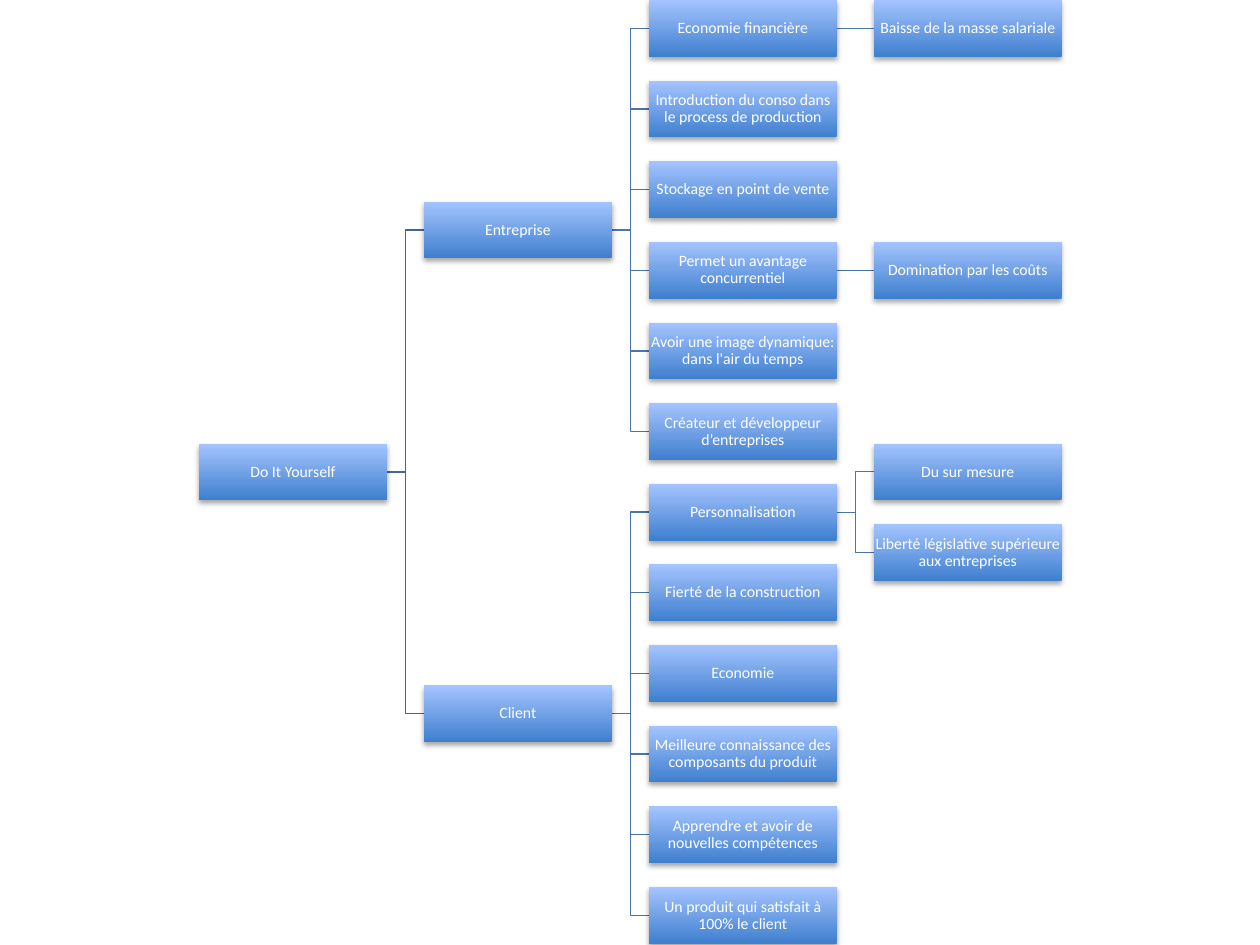
"""Builds a horizontal hierarchy slide about Do It Yourself."""
from lxml import etree
from pptx import Presentation
from pptx.dml.color import RGBColor
from pptx.enum.shapes import MSO_CONNECTOR, MSO_SHAPE
from pptx.enum.text import MSO_ANCHOR, PP_ALIGN
from pptx.oxml.ns import qn
from pptx.util import Inches, Pt

RECT = MSO_SHAPE.RECTANGLE
STRAIGHT = MSO_CONNECTOR.STRAIGHT
MIDDLE = MSO_ANCHOR.MIDDLE
CENTER = PP_ALIGN.CENTER

ROOT = "Do It Yourself"
BRANCHES = [
    ("Entreprise", [
        ("Economie financière", ["Baisse de la masse salariale"]),
        ("Introduction du conso dans le process de production", []),
        ("Stockage en point de vente", []),
        ("Permet un avantage concurrentiel", ["Domination par les coûts"]),
        ("Avoir une image dynamique: dans l'air du temps", []),
        ("Créateur et développeur d’entreprises", []),
    ]),
    ("Client", [
        ("Personnalisation", ["Du sur mesure", "Liberté législative supérieure aux entreprises"]),
        ("Fierté de la construction", []),
        ("Economie", []),
        ("Meilleure connaissance des composants du produit", []),
        ("Apprendre et avoir de nouvelles compétences", []),
        ("Un produit qui satisfait à 100% le client", []),
    ]),
]

COLORS = {"bottom": "3F7FCE", "top": "A4C4FF", "text": "FFFFFF",
          "trunk": "3F6797", "twig": "4875AC", "shadow": "000000"}
FONT = "Calibri"
SLIDE_W, SLIDE_H = 10, 7.5
BOX_W, BOX_H = 1.49, 0.45
LEFT, COL_STEP, ROW_STEP = 1.58, 1.785, 0.64


def rgb(name):
    return RGBColor.from_string(COLORS[name])


def box_left(col):
    return LEFT + col * COL_STEP


def row_middle(row):
    return row * ROW_STEP + BOX_H / 2


def add_shadow(sp):
    effects = etree.SubElement(sp._element.spPr, qn("a:effectLst"))
    shadow = etree.SubElement(effects, qn("a:outerShdw"), blurRad=str(Pt(3.1)),
                              dist=str(Pt(1.8)), dir="5400000", rotWithShape="0")
    color = etree.SubElement(shadow, qn("a:srgbClr"), val=COLORS["shadow"])
    etree.SubElement(color, qn("a:alpha"), val="35000")


def add_box(shapes, text, col, row):
    sp = shapes.add_shape(RECT, Inches(box_left(col)), Inches(row * ROW_STEP),
                          Inches(BOX_W), Inches(BOX_H))
    sp.fill.gradient()
    sp.fill.gradient_angle = 90
    for stop, name, position in zip(sp.fill.gradient_stops, ("bottom", "top"), (0, 1)):
        stop.color.rgb = rgb(name)
        stop.position = position
    sp.line.fill.background()
    add_shadow(sp)
    tf = sp.text_frame
    tf.word_wrap = True
    tf.vertical_anchor = MIDDLE
    tf.margin_left = tf.margin_right = tf.margin_top = tf.margin_bottom = Inches(0.01)
    p = tf.paragraphs[0]
    p.alignment = CENTER
    p.line_spacing = 0.9
    r = p.add_run()
    r.text = text
    r.font.name = FONT
    r.font.size = Pt(9)
    r.font.color.rgb = rgb("text")


def add_link(shapes, col, row, child_row):
    x1, x2 = Inches(box_left(col) + BOX_W), Inches(box_left(col + 1))
    y1, y2 = Inches(row_middle(row)), Inches(row_middle(child_row))
    if y1 == y2:
        link = shapes.add_connector(STRAIGHT, x1, y1, x2, y2)
        etree.SubElement(link._element.spPr, qn("a:effectLst"))
    else:
        mid = (x1 + x2) // 2
        path = shapes.build_freeform(x1, y1)
        path.add_line_segments([(mid, y1), (mid, y2), (x2, y2)], close=False)
        link = path.convert_to_shape()
        link.fill.background()
        link.shadow.inherit = False
    link.line.color.rgb = rgb("trunk" if col == 0 else "twig")
    link.line.width = Pt(0.75)


def lay_out():
    boxes, links, branch_rows, row = [], [], [], 0
    for branch, topics in BRANCHES:
        branch_row = row + (len(topics) - 1) / 2
        branch_rows.append(branch_row)
        boxes.append((branch, 1, branch_row))
        for topic, details in topics:
            boxes.append((topic, 2, row))
            links.append((1, branch_row, row))
            for i, detail in enumerate(details):
                detail_row = row + i - (len(details) - 1) / 2
                boxes.append((detail, 3, detail_row))
                links.append((2, row, detail_row))
            row += 1
    root_row = sum(branch_rows) / len(branch_rows)
    boxes.insert(0, (ROOT, 0, root_row))
    links += [(0, root_row, branch_row) for branch_row in branch_rows]
    return boxes, links


def main():
    prs = Presentation()
    prs.slide_width, prs.slide_height = Inches(SLIDE_W), Inches(SLIDE_H)
    shapes = prs.slides.add_slide(prs.slide_layouts[6]).shapes
    boxes, links = lay_out()
    for link in links:
        add_link(shapes, *link)
    for box in boxes:
        add_box(shapes, *box)
    prs.save("out.pptx")


if __name__ == "__main__":
    main()
